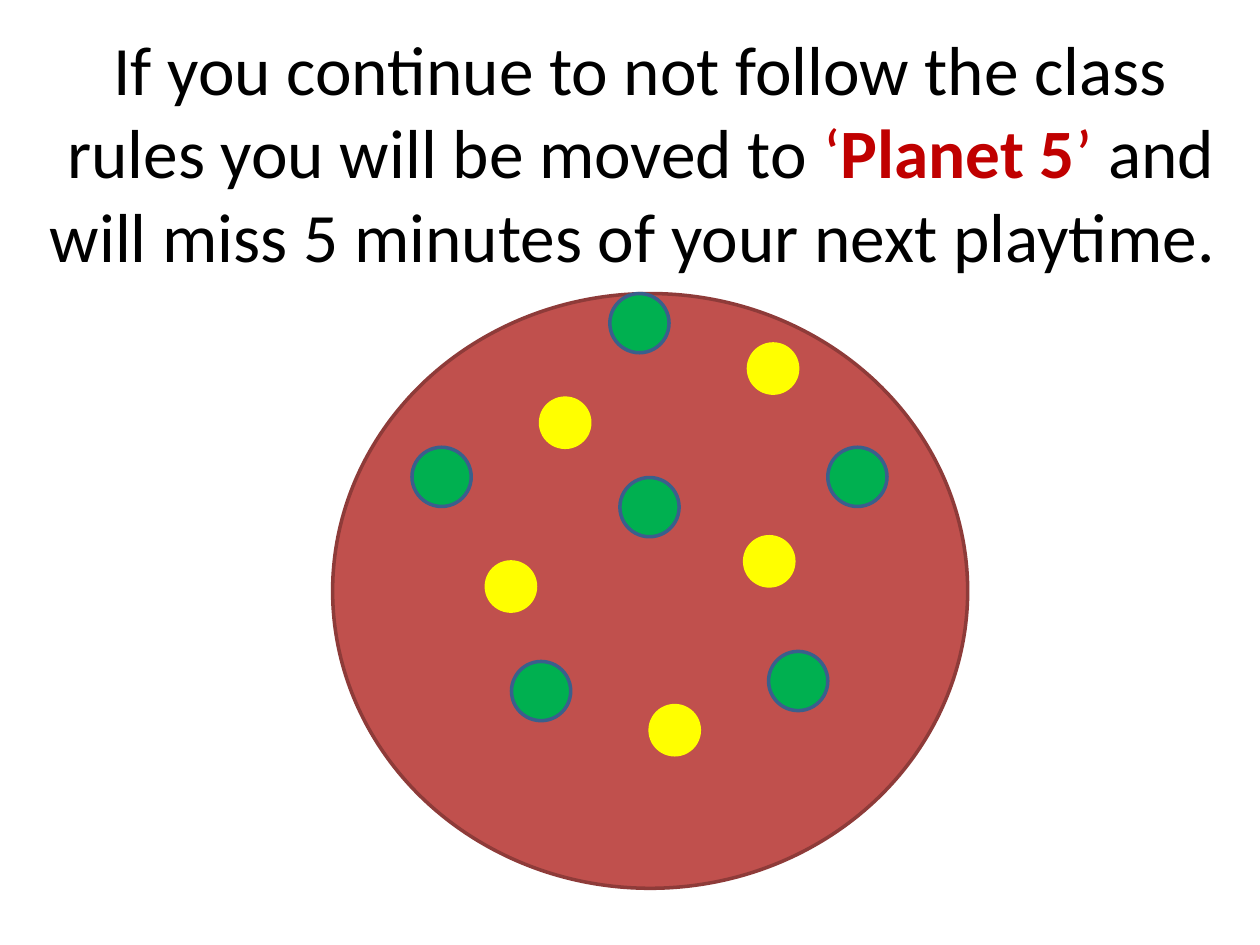
import pptx
import pptx.util
import pptx.dml.color
import pptx.enum.shapes
import pptx.enum.text
from dataclasses import dataclass
from pptx.util import Inches

RGB = pptx.dml.color.RGBColor.from_string


@dataclass(frozen=True)
class Theme:
    font: str = "Calibri"
    size: float = 39.6
    line: float = 2
    ink: str = "000000"
    alert: str = "C00000"


@dataclass(frozen=True)
class Style:
    fill: str
    edge: str
    width: float
    height: float


@dataclass(frozen=True)
class Run:
    text: str
    color: str
    bold: bool = False


THEME = Theme()
PLANET = Style("C0504D", "8E3B39", 5.04, 4.72)
GREEN = Style("00B050", "3A5F8C", 0.47, 0.47)
YELLOW = Style("FFFF00", "FFFF00", 0.39, 0.39)

TITLE = [
    Run("If you continue to not follow the class rules you will be moved to ", THEME.ink),
    Run("‘", THEME.alert),
    Run("Planet 5", THEME.alert, True),
    Run("’ ", THEME.alert),
    Run("and will miss 5 minutes of your next playtime. ", THEME.ink),
]

# Left and top of each disc, from back to front
DISCS = [
    (PLANET, [(2.64, 2.33)]),
    (GREEN, [(4.84, 2.33), (4.92, 3.79), (3.27, 3.55),
             (6.57, 3.55), (6.1, 5.17), (4.06, 5.25)]),
    (YELLOW, [(5.94, 2.73), (4.29, 3.16), (5.91, 4.26),
              (3.86, 4.46), (5.16, 5.6)]),
]


def write_title(slide, runs: list[Run]) -> None:
    title = slide.shapes.title
    title.left, title.top = Inches(0.28), Inches(0.3)
    title.width, title.height = Inches(9.61), Inches(1.8)
    frame = title.text_frame
    frame.word_wrap = True
    frame.auto_size = pptx.enum.text.MSO_AUTO_SIZE.NONE
    frame.vertical_anchor = pptx.enum.text.MSO_ANCHOR.MIDDLE
    para = frame.paragraphs[0]
    para.alignment = pptx.enum.text.PP_ALIGN.CENTER
    para.font.name = THEME.font
    para.font.size = pptx.util.Pt(THEME.size)
    for item in runs:
        run = para.add_run()
        run.text = item.text
        run.font.bold = item.bold
        run.font.color.rgb = RGB(item.color)


def draw_disc(slide, style: Style, left: float, top: float) -> None:
    disc = slide.shapes.add_shape(
        pptx.enum.shapes.MSO_SHAPE.OVAL, Inches(left), Inches(top),
        Inches(style.width), Inches(style.height))
    disc.shadow.inherit = False
    disc.fill.solid()
    disc.fill.fore_color.rgb = RGB(style.fill)
    disc.line.color.rgb = RGB(style.edge)
    disc.line.width = pptx.util.Pt(THEME.line)


def main() -> None:
    deck = pptx.Presentation()
    deck.slide_width, deck.slide_height = Inches(10), Inches(7.5)
    slide = deck.slides.add_slide(deck.slide_layouts[5])

    # Warning text
    write_title(slide, TITLE)

    # Planet and its spots
    for style, spots in DISCS:
        for left, top in spots:
            draw_disc(slide, style, left, top)

    deck.save("out.pptx")


if __name__ == "__main__":
    main()
